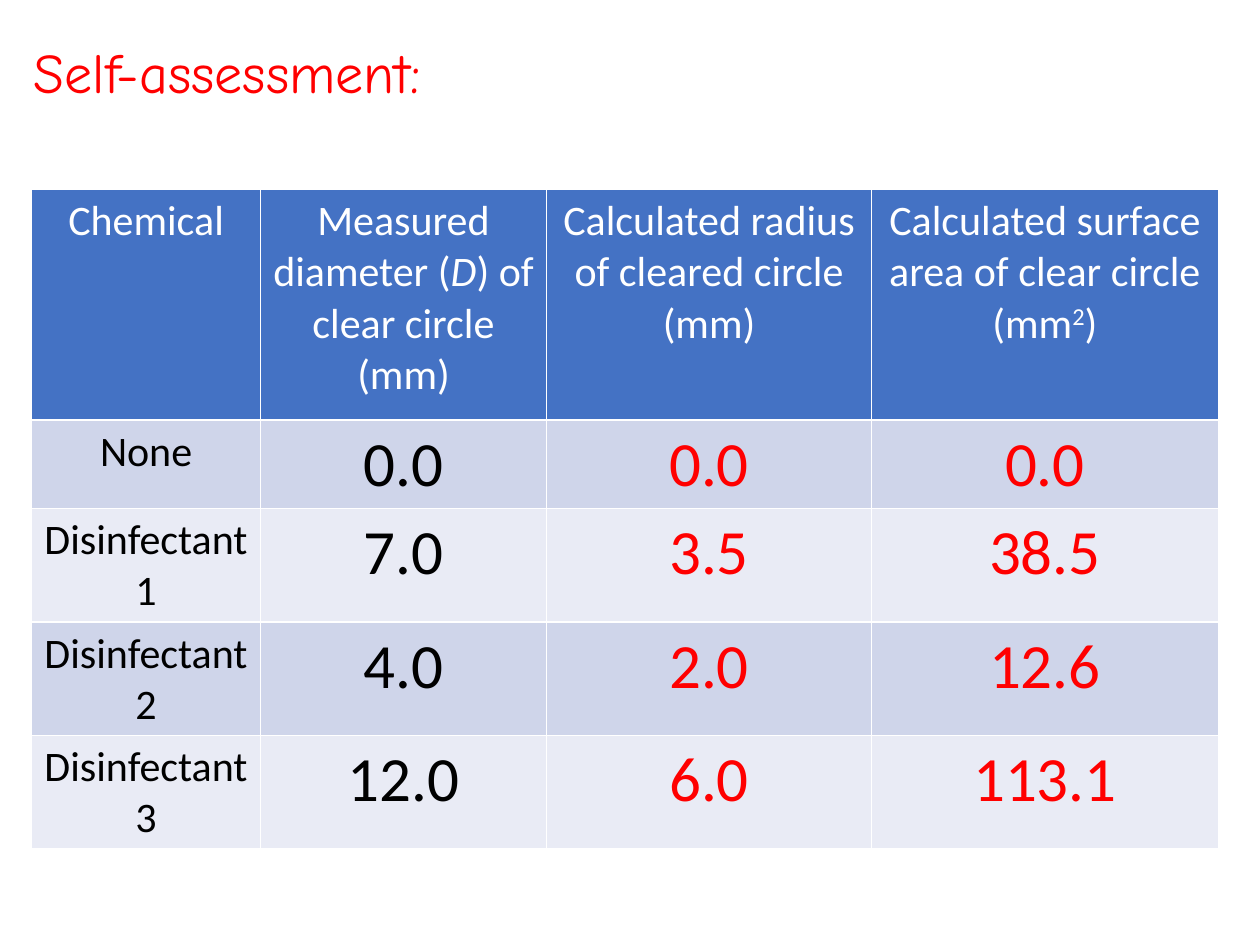
from pptx import Presentation
from pptx import util as u
from pptx.dml.color import RGBColor
from pptx.enum import text
from pptx.oxml import parse_xml
from pptx.oxml.ns import nsdecls

COLOURS = {
    "header": "4472C4", "band": "CFD5EA", "light": "E9EBF5",
    "white": "FFFFFF", "black": "000000", "answer": "FF0000",
}
TITLE_FONT, TABLE_FONT = "Comic Neue", "Calibri"

# Header cells are lists of (text, style) pieces
HEADERS = [
    [("Chemical", "")],
    [("Measured diameter (", ""), ("D", "italic"), (") of clear circle (mm)", "")],
    [("Calculated radius of cleared circle (mm)", "")],
    [("Calculated surface area of clear circle (mm", ""), ("2", "super"), (")", "")],
]
RESULTS = [
    ("None", "0.0", "0.0", "0.0"),
    ("Disinfectant 1", "7.0", "3.5", "38.5"),
    ("Disinfectant 2", "4.0", "2.0", "12.6"),
    ("Disinfectant 3", "12.0", "6.0", "113.1"),
]
# Size and colour of each result column
RESULT_STYLES = [(24, "black"), (36, "black"), (36, "answer"), (36, "answer")]
COLUMN_WIDTHS = [4.61, 5.77, 6.55, 6.99]
HEADER_HEIGHT, RESULT_HEIGHT = 4.65, 1.78
SIDE_MARGIN = 0.2  # narrow enough to keep "Disinfectant" on one line


class SlideBuilder:
    def __init__(self, prs):
        self.slide = prs.slides.add_slide(prs.slide_layouts[5])

    def format_run(self, run, font, size, colour):
        run.font.name = font
        run.font.size = u.Pt(size)
        run.font.bold = False
        run.font.color.rgb = RGBColor.from_string(COLOURS[colour])

    def title(self, wording, left, top, width, height):
        heading = self.slide.shapes.title
        heading.left, heading.top = u.Cm(left), u.Cm(top)
        heading.width, heading.height = u.Cm(width), u.Cm(height)
        frame = heading.text_frame
        frame.text = wording
        frame.word_wrap = False
        frame.auto_size = text.MSO_AUTO_SIZE.SHAPE_TO_FIT_TEXT
        frame.vertical_anchor = text.MSO_ANCHOR.TOP
        line = frame.paragraphs[0]
        line.alignment = text.PP_ALIGN.LEFT
        self.format_run(line.runs[0], TITLE_FONT, 32, "answer")

    def table(self, left, top, widths, heights):
        frame = self.slide.shapes.add_table(
            len(heights), len(widths), u.Cm(left), u.Cm(top),
            u.Cm(sum(widths)), u.Cm(sum(heights)))
        grid = frame.table
        grid.first_row = grid.horz_banding = False
        for column, width in zip(grid.columns, widths):
            column.width = u.Cm(width)
        for row, height in zip(grid.rows, heights):
            row.height = u.Cm(height)
        return grid

    def cell(self, cell, pieces, fill, size, colour):
        cell.margin_left = cell.margin_right = u.Cm(SIDE_MARGIN)
        line = cell.text_frame.paragraphs[0]
        line.alignment = text.PP_ALIGN.CENTER
        for wording, style in pieces:
            run = line.add_run()
            run.text = wording
            self.format_run(run, TABLE_FONT, size, colour)
            if style == "italic":
                run.font.italic = True
            elif style == "super":
                run.font._element.set("baseline", "30000")
        self.borders(cell)
        cell.fill.solid()
        cell.fill.fore_color.rgb = RGBColor.from_string(COLOURS[fill])

    def borders(self, cell):
        properties = cell._tc.get_or_add_tcPr()
        for side in "LRTB":
            properties.append(parse_xml(
                f'<a:ln{side} {nsdecls("a")} w="{u.Pt(1)}"><a:solidFill>'
                f'<a:srgbClr val="{COLOURS["white"]}"/></a:solidFill></a:ln{side}>'))


def main():
    prs = Presentation()
    prs.slide_width, prs.slide_height = u.Cm(25.4), u.Cm(19.05)
    builder = SlideBuilder(prs)

    # Title
    builder.title("Self-assessment:", 0.43, 0.63, 9.96, 1.63)

    # Results table
    heights = [HEADER_HEIGHT] + [RESULT_HEIGHT] * len(RESULTS)
    results = builder.table(0.64, 3.82, COLUMN_WIDTHS, heights)
    for col, pieces in enumerate(HEADERS):
        builder.cell(results.cell(0, col), pieces, "header", 24, "white")
    for row, values in enumerate(RESULTS, start=1):
        fill = "band" if row % 2 else "light"
        for col, (value, (size, colour)) in enumerate(zip(values, RESULT_STYLES)):
            builder.cell(results.cell(row, col), [(value, "")], fill, size, colour)

    prs.save("out.pptx")


if __name__ == "__main__":
    main()
